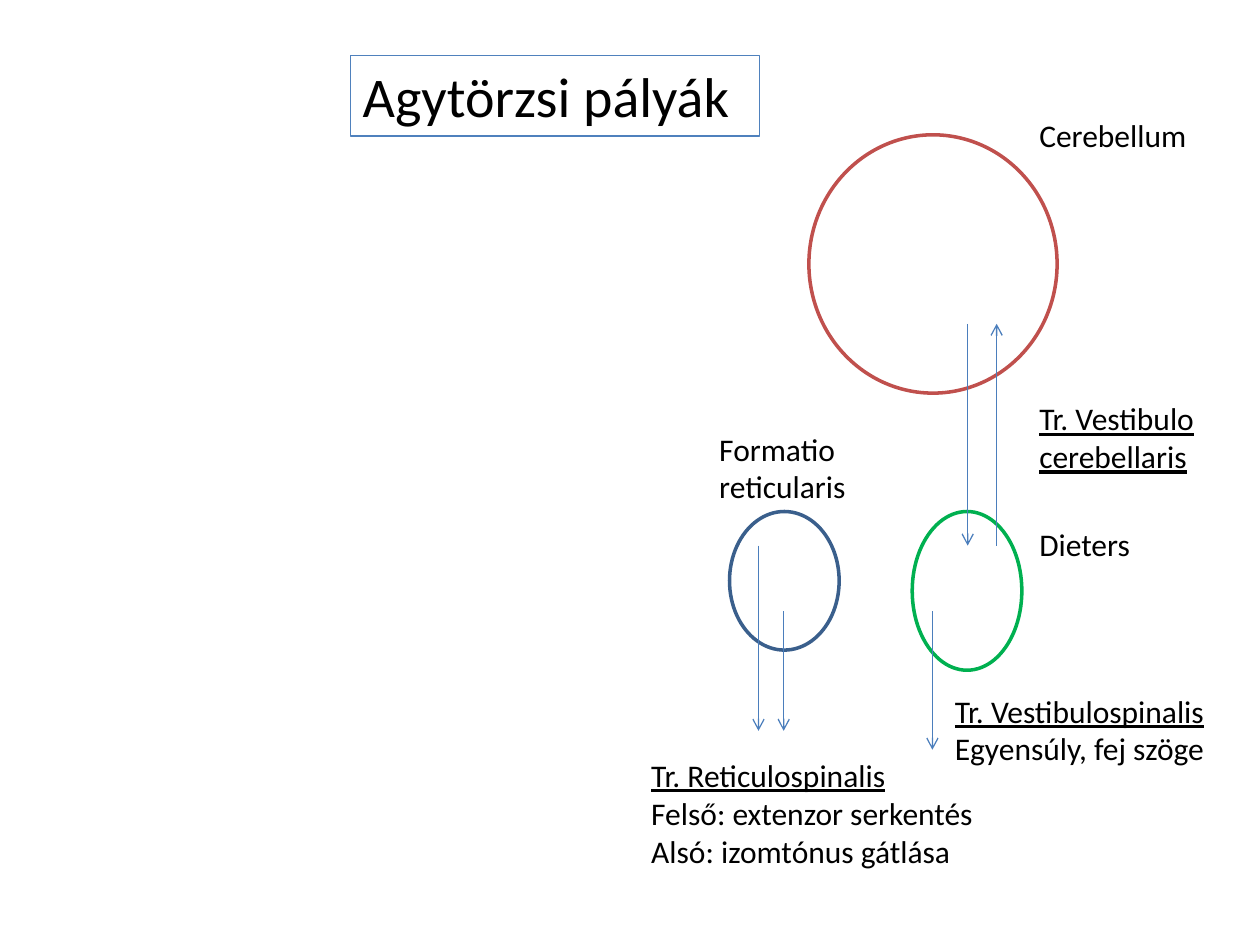
"""Build the slide of brainstem pathways."""
from lxml import etree
from pptx import Presentation
from pptx.dml.color import RGBColor
from pptx.enum.shapes import MSO_CONNECTOR, MSO_SHAPE
from pptx.enum.text import MSO_ANCHOR, PP_ALIGN
from pptx.oxml.ns import qn
from pptx.util import Inches, Pt

COLORS = {
    "text": "000000",
    "cerebellum": "C0504D",
    "dieters": "00B050",
    "reticularis": "3A5F8C",
    "arrow": "4B7EBC",
    "title": "4F81BD",
}


def add_outline(preset, box, color, width):
    shape = slide.shapes.add_shape(preset, *map(Inches, box))
    shape.shadow.inherit = False
    shape.fill.background()
    shape.line.color.rgb = RGBColor.from_string(COLORS[color])
    shape.line.width = Pt(width)
    return shape


def write_lines(shape, lines, size, wrap):
    frame = shape.text_frame
    frame.word_wrap = wrap
    frame.vertical_anchor = MSO_ANCHOR.TOP
    for index, (text, underlined) in enumerate(lines):
        paragraph = frame.add_paragraph() if index else frame.paragraphs[0]
        paragraph.alignment = PP_ALIGN.LEFT
        run = paragraph.add_run()
        run.text = text
        run.font.name = "Calibri"
        run.font.size = Pt(size)
        run.font.underline = underlined
        run.font.color.rgb = RGBColor.from_string(COLORS["text"])


presentation = Presentation()
presentation.slide_width = Inches(10)
presentation.slide_height = Inches(7.5)
slide = presentation.slides.add_slide(presentation.slide_layouts[6])

nuclei = [
    ("cerebellum", (6.42, 1.07, 1.97, 2.05)),
    ("dieters", (7.24, 4.06, 0.87, 1.26)),
    ("reticularis", (5.79, 4.06, 0.87, 1.1)),
]
for color, box in nuclei:
    add_outline(MSO_SHAPE.OVAL, box, color, 2)

arrows = [
    (7.91, 4.33, 2.57),
    (7.68, 2.57, 4.33),
    (7.4, 4.85, 5.95),
    (6.02, 4.33, 5.8),
    (6.22, 4.85, 5.8),
]
for x, start, end in arrows:
    arrow = slide.shapes.add_connector(
        MSO_CONNECTOR.STRAIGHT, Inches(x), Inches(start), Inches(x), Inches(end)
    )
    arrow.line.color.rgb = RGBColor.from_string(COLORS["arrow"])
    arrow.line.width = Pt(0.75)
    etree.SubElement(arrow.line._get_or_add_ln(), qn("a:tailEnd"), type="arrow")
    etree.SubElement(arrow._element.spPr, qn("a:effectLst"))

labels = [
    ((8.15, 0.87, 1.38, 0.4), [("Cerebellum", False)]),
    ((8.15, 4.12, 0.93, 0.4), [("Dieters", False)]),
    ((8.15, 3.12, 1.44, 0.71), [("Tr. Vestibulo", True), ("cerebellaris", True)]),
    ((7.48, 5.44, 2.26, 0.71),
     [("Tr. Vestibulospinalis", True), ("Egyensúly, fej szöge", False)]),
    ((5.61, 3.36, 1.22, 0.71), [("Formatio", False), ("reticularis", False)]),
    ((5.07, 5.95, 2.78, 1.01),
     [("Tr. Reticulospinalis", True), ("Felső: extenzor serkentés", False),
      ("Alsó: izomtónus gátlása", False)]),
]
for box, lines in labels:
    write_lines(slide.shapes.add_textbox(*map(Inches, box)), lines, 18, False)

title = add_outline(MSO_SHAPE.RECTANGLE, (2.78, 0.44, 3.25, 0.64), "title", 0.75)
write_lines(title, [("Agytörzsi pályák", False)], 32, True)

presentation.save("out.pptx")
